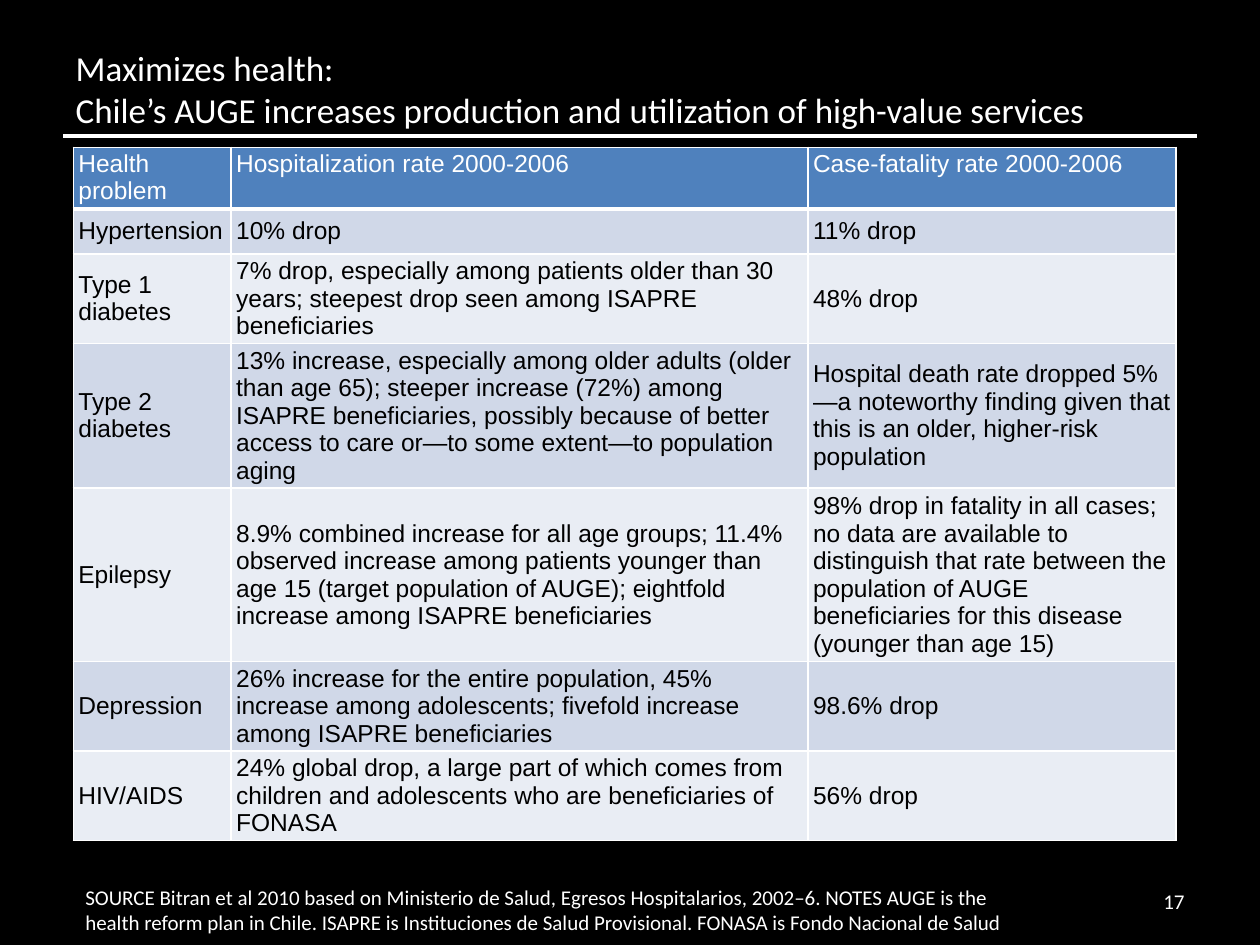
from typing import NamedTuple

from lxml import etree
from pptx import Presentation
from pptx.dml.color import RGBColor
from pptx.enum import shapes, text
from pptx.oxml import ns
from pptx.util import Cm, Pt

BLACK = RGBColor(0x00, 0x00, 0x00)
WHITE = RGBColor(0xFF, 0xFF, 0xFF)
BLUE = RGBColor(0x4F, 0x81, 0xBD)
BANDS = (RGBColor(0xE9, 0xED, 0xF4), RGBColor(0xD0, 0xD8, 0xE8))

WIDTHS = (3.18, 11.63, 7.42)


class Row(NamedTuple):
    height: float
    problem: str
    rate: str
    fatal: str


class Note(NamedTuple):
    left: float
    top: float
    width: float
    words: str
    align: text.PP_ALIGN


ROWS = (
    Row(1.24, "Health problem", "Hospitalization rate 2000-2006",
        "Case-fatality rate 2000-2006"),
    Row(0.91, "Hypertension", "10% drop", "11% drop"),
    Row(1.8, "Type 1 diabetes",
        "7% drop, especially among patients older than 30 years; "
        "steepest drop seen among ISAPRE beneficiaries",
        "48% drop"),
    Row(2.92, "Type 2 diabetes",
        "13% increase, especially among older adults (older than age 65); "
        "steeper increase (72%) among ISAPRE beneficiaries, possibly because "
        "of better access to care or—to some extent—to population aging",
        "Hospital death rate dropped 5%—a noteworthy finding given that "
        "this is an older, higher-risk population"),
    Row(3.5, "Epilepsy",
        "8.9% combined increase for all age groups; 11.4% observed increase "
        "among patients younger than age 15 (target population of AUGE); "
        "eightfold increase among ISAPRE beneficiaries",
        "98% drop in fatality in all cases; no data are available to "
        "distinguish that rate between the population of AUGE beneficiaries "
        "for this disease (younger than age 15)"),
    Row(1.8, "Depression",
        "26% increase for the entire population, 45% increase among "
        "adolescents; fivefold increase among ISAPRE beneficiaries",
        "98.6% drop"),
    Row(1.8, "HIV/AIDS",
        "24% global drop, a large part of which comes from children and "
        "adolescents who are beneficiaries of FONASA",
        "56% drop"),
)

NOTES = (
    Note(1.47, 17.83, 19.89,
         "SOURCE Bitran et al 2010 based on Ministerio de Salud, Egresos "
         "Hospitalarios, 2002–6. NOTES AUGE is the health reform plan in "
         "Chile. ISAPRE is Instituciones de Salud Provisional. FONASA is "
         "Fondo Nacional de Salud", text.PP_ALIGN.LEFT),
    Note(22.68, 17.65, 1.45, "17", text.PP_ALIGN.RIGHT),
)


def style(frame, size: float, face: str, color: RGBColor) -> None:
    for para in frame.paragraphs:
        for run in para.runs:
            run.font.size = Pt(size)
            run.font.name = face
            run.font.bold = False
            run.font.color.rgb = color


def edge(cell, side: str, width: float) -> None:
    """Add a white border on one side (L, R, T or B); call before filling."""
    line = etree.SubElement(cell._tc.get_or_add_tcPr(),
                            ns.qn(f"a:ln{side}"), w=str(Pt(width)))
    fill = etree.SubElement(line, ns.qn("a:solidFill"))
    etree.SubElement(fill, ns.qn("a:srgbClr"), val=str(WHITE))


def draw_title(slide) -> None:
    title = slide.shapes.title
    title.left, title.top = Cm(1.27), Cm(0.97)
    title.width, title.height = Cm(22.86), Cm(1.78)
    frame = title.text_frame
    frame.text = ("Maximizes health:\vChile’s AUGE increases production "
                  "and utilization of high-value services")
    frame.word_wrap = True
    frame.auto_size = text.MSO_AUTO_SIZE.NONE
    frame.vertical_anchor = text.MSO_ANCHOR.BOTTOM
    frame.paragraphs[0].alignment = text.PP_ALIGN.LEFT
    style(frame, 20, "Calibri", WHITE)


def draw_rule(slide) -> None:
    rule = slide.shapes.add_connector(
        shapes.MSO_CONNECTOR.STRAIGHT, Cm(1.27), Cm(2.74), Cm(24.13), Cm(2.74))
    rule.line.color.rgb = WHITE
    rule.line.width = Pt(2.25)
    etree.SubElement(rule._element.spPr, ns.qn("a:effectLst"))


def draw_cell(cell, words: str, row: int) -> None:
    head = row == 0
    cell.text = words
    cell.margin_left = cell.margin_right = Cm(0.1)
    cell.margin_top = cell.margin_bottom = Cm(0.05)
    cell.vertical_anchor = (text.MSO_ANCHOR.TOP if head
                            else text.MSO_ANCHOR.MIDDLE)
    style(cell.text_frame, 14, "Arial", WHITE if head else BLACK)
    edge(cell, "L", 1)
    edge(cell, "R", 1)
    edge(cell, "T", 3 if row == 1 else 1)
    edge(cell, "B", 3 if head else 1)
    cell.fill.solid()
    cell.fill.fore_color.rgb = BLUE if head else BANDS[row % 2]


def draw_table(slide) -> None:
    table = slide.shapes.add_table(
        len(ROWS), len(WIDTHS), Cm(1.48), Cm(2.97), Cm(sum(WIDTHS)),
        Cm(sum(row.height for row in ROWS))).table
    table.horz_banding = False
    for col, width in zip(table.columns, WIDTHS):
        col.width = Cm(width)
    for i, row in enumerate(ROWS):
        table.rows[i].height = Cm(row.height)
        for j, words in enumerate((row.problem, row.rate, row.fatal)):
            draw_cell(table.cell(i, j), words, i)


def draw_note(slide, note: Note) -> None:
    box = slide.shapes.add_textbox(
        Cm(note.left), Cm(note.top), Cm(note.width), Cm(1.02))
    frame = box.text_frame
    frame.text = note.words
    frame.word_wrap = True
    frame.vertical_anchor = text.MSO_ANCHOR.MIDDLE
    frame.paragraphs[0].alignment = note.align
    style(frame, 12, "Calibri", WHITE)


def main() -> None:
    deck = Presentation()
    deck.slide_width, deck.slide_height = Cm(25.4), Cm(19.05)
    slide = deck.slides.add_slide(deck.slide_layouts.get_by_name("Title Only"))
    slide.background.fill.solid()
    slide.background.fill.fore_color.rgb = BLACK
    draw_title(slide)
    draw_rule(slide)
    draw_table(slide)
    for note in NOTES:
        draw_note(slide, note)
    deck.save("out.pptx")


if __name__ == "__main__":
    main()
